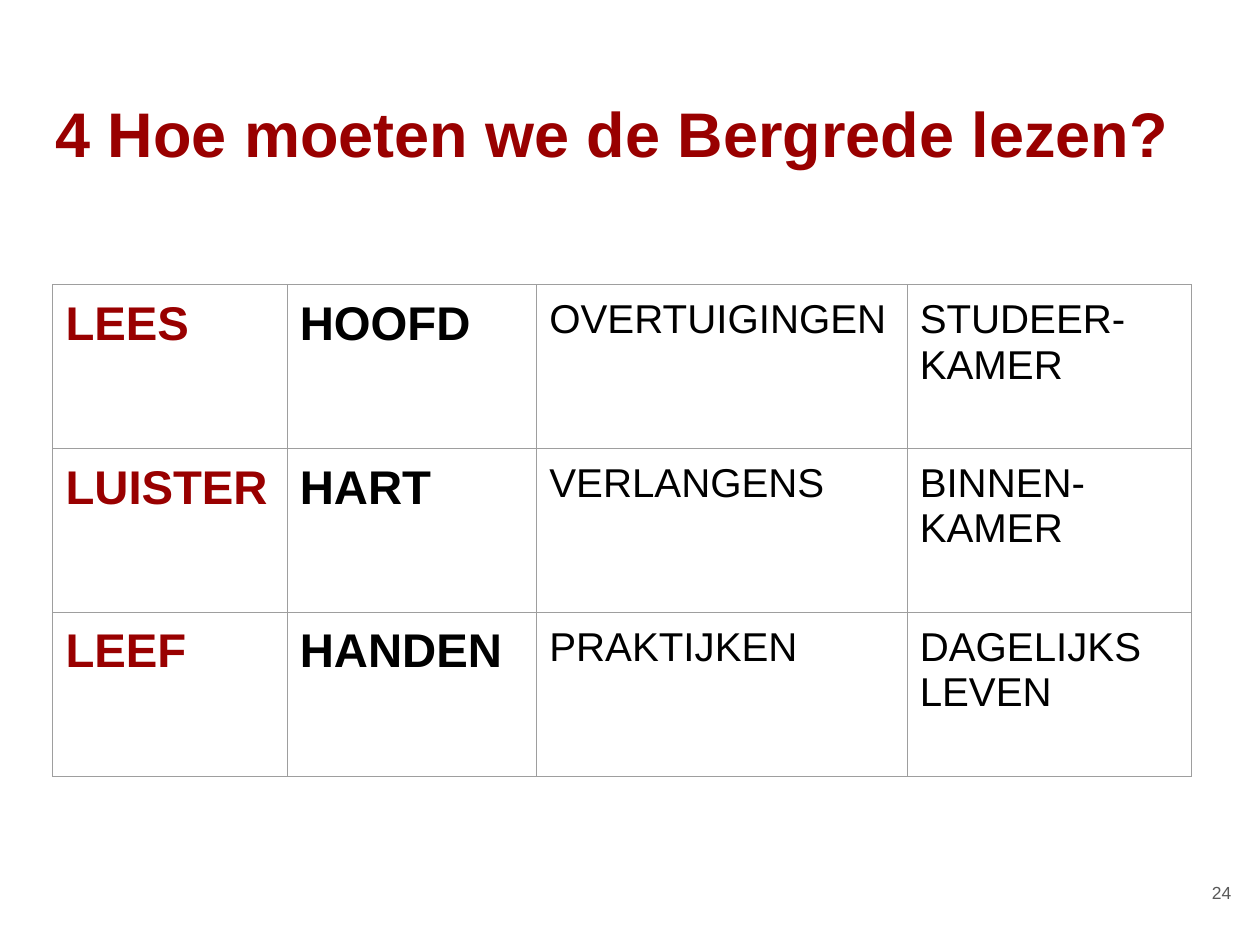
import pptx
import pptx.dml.color
import pptx.enum.text
import pptx.util
from lxml import etree
from pptx.oxml.ns import qn

Inches, Pt = pptx.util.Inches, pptx.util.Pt
RGBColor = pptx.dml.color.RGBColor
Align, Anchor = pptx.enum.text.PP_ALIGN, pptx.enum.text.MSO_ANCHOR

DARK_RED = RGBColor(0x99, 0x00, 0x00)
BLACK = RGBColor(0x00, 0x00, 0x00)
GREY = RGBColor(0x59, 0x59, 0x59)
BORDER_GREY = RGBColor(0x9E, 0x9E, 0x9E)

COLUMN_WIDTHS = [1.86, 1.98, 2.94, 2.26]
ROW_HEIGHT = 1.3
COLUMN_FORMATS = [
    dict(size=27, color=DARK_RED, bold=True),
    dict(size=27, color=BLACK, bold=True),
    dict(size=23),
    dict(size=23),
]
READING_STEPS = [
    ["LEES", "HOOFD", "OVERTUIGINGEN", "STUDEER-\nKAMER"],
    ["LUISTER", "HART", "VERLANGENS", "BINNEN-\nKAMER"],
    ["LEEF", "HANDEN", "PRAKTIJKEN", "DAGELIJKS LEVEN"],
]


def write_text(frame, text, size=18, color=BLACK, bold=False,
               align=Align.LEFT, font="Arial"):
    """Fill a text frame, one paragraph for each line of text."""
    frame.word_wrap = True
    frame.text = text
    for paragraph in frame.paragraphs:
        paragraph.alignment = align
        for run in paragraph.runs:
            run.font.name = font
            run.font.size = Pt(size)
            run.font.bold = bold
            run.font.color.rgb = color


def set_borders(cell, color, width):
    properties = cell._tc.get_or_add_tcPr()
    for side in ("a:lnL", "a:lnR", "a:lnT", "a:lnB"):
        line = etree.SubElement(properties, qn(side), w=str(Pt(width)))
        fill = etree.SubElement(line, qn("a:solidFill"))
        etree.SubElement(fill, qn("a:srgbClr"), val=str(color))


class SlideBuilder:
    inset = Inches(0.1)

    def __init__(self, slide):
        self.slide = slide

    def set_margins(self, holder):
        holder.margin_left = holder.margin_right = self.inset
        holder.margin_top = holder.margin_bottom = self.inset

    def text(self, left, top, width, height, text, anchor=Anchor.TOP, **style):
        frame = self.slide.shapes.add_textbox(
            Inches(left), Inches(top), Inches(width), Inches(height)).text_frame
        self.set_margins(frame)
        frame.vertical_anchor = anchor
        write_text(frame, text, **style)

    def table(self, left, top, widths, row_height, rows, formats):
        grid = self.slide.shapes.add_table(
            len(rows), len(widths), Inches(left), Inches(top),
            Inches(sum(widths)), Inches(row_height * len(rows))).table
        grid.first_row = grid.horz_banding = False
        for column, width in zip(grid.columns, widths):
            column.width = Inches(width)
        for row, texts in zip(grid.rows, rows):
            row.height = Inches(row_height)
            for cell, text, style in zip(row.cells, texts, formats):
                self.set_margins(cell)
                set_borders(cell, BORDER_GREY, 0.75)
                cell.fill.background()
                write_text(cell.text_frame, text, **style)


def main():
    deck = pptx.Presentation()
    deck.slide_width, deck.slide_height = Inches(10), Inches(7.5)
    builder = SlideBuilder(deck.slides.add_slide(deck.slide_layouts[6]))
    builder.text(0.34, 0.65, 9.32, 0.83, "4 Hoe moeten we de Bergrede lezen?",
                 size=36, color=DARK_RED, bold=True)
    builder.table(0.42, 2.26, COLUMN_WIDTHS, ROW_HEIGHT, READING_STEPS,
                  COLUMN_FORMATS)
    builder.text(9.27, 6.8, 0.6, 0.57, "24", anchor=Anchor.MIDDLE,
                 size=10, color=GREY, align=Align.RIGHT)
    deck.save("out.pptx")


if __name__ == "__main__":
    main()
